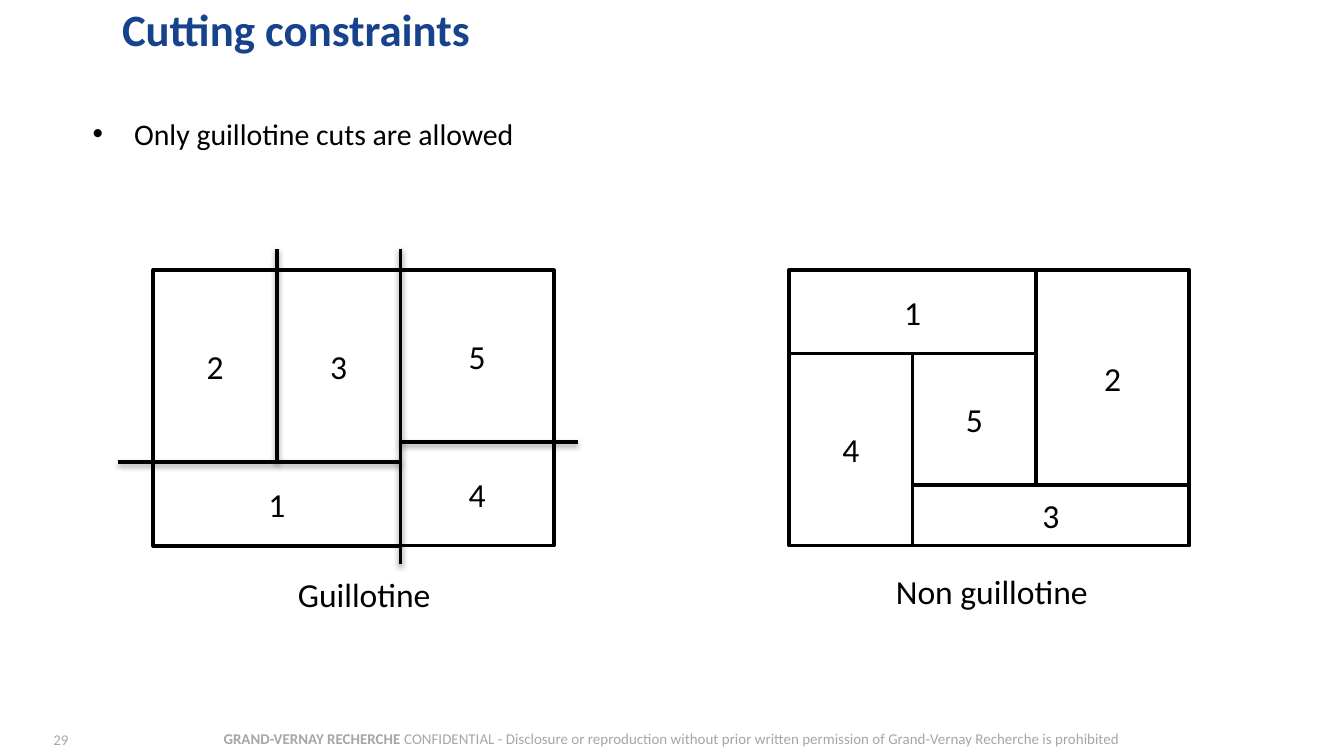
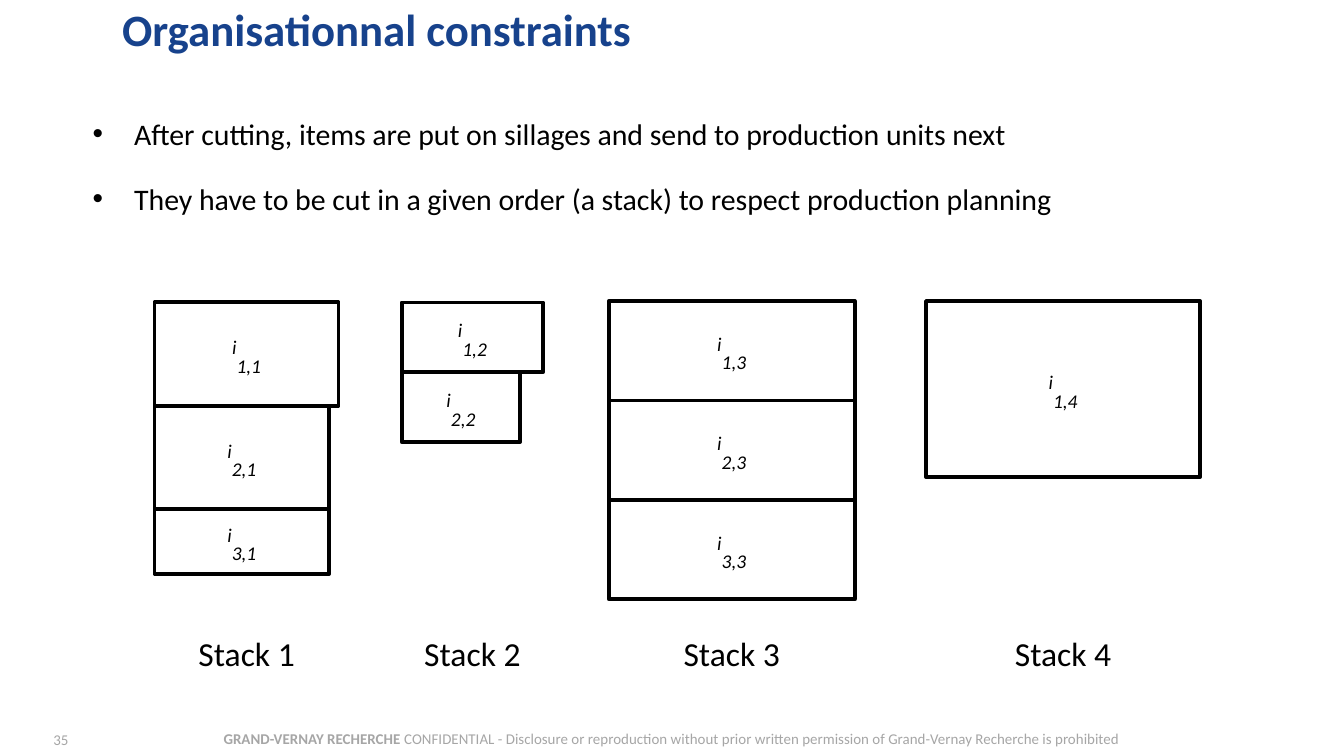
from dataclasses import dataclass
from itertools import accumulate

from lxml import etree
from pptx import Presentation
from pptx.dml.color import RGBColor
from pptx.enum.shapes import MSO_CONNECTOR, MSO_SHAPE
from pptx.enum.text import MSO_ANCHOR, PP_ALIGN
from pptx.oxml.ns import qn
from pptx.util import Inches, Pt

LEFT, CENTER, RIGHT = PP_ALIGN.LEFT, PP_ALIGN.CENTER, PP_ALIGN.RIGHT
TOP, MIDDLE = MSO_ANCHOR.TOP, MSO_ANCHOR.MIDDLE
RECTANGLE, STRAIGHT = MSO_SHAPE.RECTANGLE, MSO_CONNECTOR.STRAIGHT
BLANK_LAYOUT = 6
TOP_SIDE = 0
COLUMNS, ROWS = 100, 56.25
CELL = Inches(0.1)


@dataclass(frozen=True)
class Theme:
    """Colours and type sizes of the deck."""
    font: str = "Calibri"
    title: RGBColor = RGBColor(0x17, 0x42, 0x8C)
    ink: RGBColor = RGBColor(0, 0, 0)
    paper: RGBColor = RGBColor(255, 255, 255)
    muted: RGBColor = RGBColor(0xA6, 0xA6, 0xA6)
    title_size: int = 24
    body_size: int = 16
    label_size: int = 18
    small_size: int = 8
    outline: int = 2


@dataclass(frozen=True)
class Box:
    """A rectangle measured in grid columns and rows."""
    left: float
    top: float
    width: float
    height: float

    def emu(self):
        """Return left, top, width and height as slide lengths."""
        return [cells(value) for value in (self.left, self.top, self.width, self.height)]


THEME = Theme()
TITLE_BOX = Box(8.1, 0.1, 89.4, 4)
BODY_BOX = Box(5.9, 8.4, 88.2, 41.7)
FOOTER_BOX = Box(6.4, 53.8, 87.2, 2.4)
NUMBER_BOX = Box(0, 54.4, 5.5, 1.3)
OWNER = "GRAND-VERNAY RECHERCHE "
NOTICE = ("CONFIDENTIAL - Disclosure or reproduction without prior written "
          "permission of Grand-Vernay Recherche is prohibited")

PLAN_COLUMNS = (0, 9.2, 18.4, 29.8)
GUILLOTINE_ROWS = (0, 12.8, 14.3, 20.5)
GUILLOTINE_PIECES = {"2": (0, 0, 1, 2), "4": (2, 1, 3, 3), "1": (0, 2, 2, 3),
                     "5": (2, 0, 3, 1), "3": (1, 0, 2, 2)}
FREE_ROWS = (0, 6.2, 16, 20.5)
FREE_PIECES = {"4": (0, 1, 1, 3), "3": (1, 2, 3, 3), "1": (0, 0, 2, 1),
               "2": (2, 0, 3, 2), "5": (1, 1, 2, 2)}

STACKS = (
    (11.5, 22.5, ((13.7, 7.7), (13, 7.7), (13, 4.8))),
    (29.9, 22.5, ((10.5, 5.2), (8.8, 5.2))),
    (45.3, 22.4, ((18.3, 7.4),) * 3),
    (68.9, 22.4, ((20.4, 13.1),)),
)
STACK_CAPTION_TOP, STACK_CAPTION_WIDTH, STACK_CAPTION_HEIGHT = 46.7, 13.9, 3.8


def cells(count):
    """Convert grid cells to a slide length."""
    return round(count * CELL)


def style(para, size, color, align=LEFT, bold=None):
    """Set the look of a whole paragraph."""
    para.alignment = align
    font = para.font
    font.name, font.size, font.bold = THEME.font, Pt(size), bold
    font.color.rgb = color


def add_text(page, box, text, size, color=THEME.ink, align=LEFT, anchor=TOP, bold=None, insets=None):
    """Add a text box with one paragraph and return its frame."""
    frame = page.shapes.add_textbox(*box.emu()).text_frame
    frame.word_wrap, frame.vertical_anchor = True, anchor
    if insets is not None:
        frame.margin_left = frame.margin_right = cells(insets)
        frame.margin_top = frame.margin_bottom = 0
    para = frame.paragraphs[0]
    para.text = text
    style(para, size, color, align, bold)
    return frame


def add_piece(page, box, text="", fill=None):
    """Add an outlined rectangle with a centred label."""
    piece = page.shapes.add_shape(RECTANGLE, *box.emu())
    piece.shadow.inherit = False
    if fill is None:
        piece.fill.background()
    else:
        piece.fill.solid()
        piece.fill.fore_color.rgb = fill
    piece.line.color.rgb, piece.line.width = THEME.ink, Pt(THEME.outline)
    frame = piece.text_frame
    frame.word_wrap, frame.vertical_anchor = True, MIDDLE
    para = frame.paragraphs[0]
    para.text = text
    style(para, THEME.label_size, THEME.ink, CENTER)
    return piece


def add_cut(page, start, end, piece=None):
    """Add a shadowed cut line, joined to the top of a piece if given."""
    cut = page.shapes.add_connector(STRAIGHT, *map(cells, start + end))
    if piece is not None:
        cut.begin_connect(piece, TOP_SIDE)
    cut.line.color.rgb, cut.line.width = THEME.ink, Pt(THEME.outline)
    effects = etree.SubElement(cut.element.spPr, qn("a:effectLst"))
    shadow = etree.SubElement(effects, qn("a:outerShdw"), blurRad=str(Pt(3.1)),
                              dist=str(Pt(1.6)), dir="5400000", rotWithShape="0")
    color = etree.SubElement(shadow, qn("a:srgbClr"), val=str(THEME.ink))
    etree.SubElement(color, qn("a:alpha"), val="38000")


def add_bullets(page, box, lines):
    """Add the bulleted body text."""
    frame = add_text(page, box, lines[0], THEME.body_size)
    for line in lines[1:]:
        frame.add_paragraph().text = line
    for index, para in enumerate(frame.paragraphs):
        properties = para._p.get_or_add_pPr()
        properties.set("marL", str(cells(3.1)))
        properties.set("indent", str(-cells(3.1)))
        para.line_spacing = 0.9
        if index:
            para.space_before = Pt(17.5)
        for child in properties.findall(qn("a:defRPr")):
            properties.remove(child)
        etree.SubElement(properties, qn("a:buFont"), typeface="Arial")
        etree.SubElement(properties, qn("a:buChar"), char="•")
        style(para, THEME.body_size, THEME.ink)


def add_page(deck, title, number, lines):
    """Add a slide with title, bullets, footer and page number."""
    page = deck.slides.add_slide(deck.slide_layouts[BLANK_LAYOUT])
    footer = add_text(page, FOOTER_BOX, OWNER, THEME.small_size, THEME.muted, CENTER)
    para = footer.paragraphs[0]
    para.runs[0].font.bold = True
    para.add_run().text = NOTICE
    add_text(page, TITLE_BOX, title, THEME.title_size, THEME.title, bold=True, insets=1)
    add_bullets(page, BODY_BOX, lines)
    add_text(page, NUMBER_BOX, number, THEME.small_size, THEME.muted, RIGHT, MIDDLE, insets=0.4)
    return page


def draw_plan(page, left, top, rows, pieces):
    """Draw a cutting plan from its tracks and return the pieces by label."""
    return {
        label: add_piece(page, Box(left + PLAN_COLUMNS[first], top + rows[upper],
                                   PLAN_COLUMNS[last] - PLAN_COLUMNS[first],
                                   rows[lower] - rows[upper]), label)
        for label, (first, upper, last, lower) in pieces.items()
    }


def draw_cuts(page, left, top, pieces):
    """Draw the guillotine cuts, which overhang the plan."""
    _, inner, middle, right = (left + column for column in PLAN_COLUMNS)
    _, upper, lower, bottom = (top + row for row in GUILLOTINE_ROWS)
    add_cut(page, (middle, lower), (left - 2.6, lower))
    add_cut(page, (right + 1.8, upper), (middle, upper))
    add_cut(page, (inner, lower), (inner, top - 1.6), pieces["1"])
    add_cut(page, (middle, bottom + 1.4), (middle, top - 1.6))


def draw_stack(page, number, left, top, sizes):
    """Draw a stack of items with its caption centred on the first one."""
    tops = accumulate((height for _, height in sizes), initial=top)
    for rank, (item_top, (width, height)) in enumerate(zip(tops, sizes), 1):
        item = add_piece(page, Box(left, item_top, width, height), fill=THEME.paper)
        para = item.text_frame.paragraphs[0]
        para.font.italic = True
        for text, baseline in (("i", 30000), (f"{rank},{number}", -25000)):
            span = para.add_run()
            span.text = text
            span._r.get_or_add_rPr().set("baseline", str(baseline))
    caption_left = left + (sizes[0][0] - STACK_CAPTION_WIDTH) / 2
    caption = Box(caption_left, STACK_CAPTION_TOP, STACK_CAPTION_WIDTH, STACK_CAPTION_HEIGHT)
    add_text(page, caption, f"Stack {number}", THEME.label_size, align=CENTER, anchor=MIDDLE)


def build_cutting(deck):
    """Build the slide that compares the two cutting plans."""
    page = add_page(deck, "Cutting constraints", "29", ["Only guillotine cuts are allowed"])
    draw_plan(page, 58.7, 20.1, FREE_ROWS, FREE_PIECES)
    pieces = draw_plan(page, 11.4, 20.1, GUILLOTINE_ROWS, GUILLOTINE_PIECES)
    for text, left, top in (("Non guillotine", 62.4, 42), ("Guillotine", 15.7, 42.2)):
        add_text(page, Box(left, top, 22.8, 4), text, THEME.label_size, align=CENTER)
    draw_cuts(page, 11.4, 20.1, pieces)


def build_stacks(deck):
    """Build the slide that shows the ordered stacks."""
    page = add_page(deck, "Organisationnal constraints", "35", [
        "After cutting, items are put on sillages and send to production units next",
        "They have to be cut in a given order (a stack) to respect production planning",
    ])
    for number, stack in enumerate(STACKS, 1):
        draw_stack(page, number, *stack)


def main():
    """Build and save the deck."""
    deck = Presentation()
    deck.slide_width, deck.slide_height = cells(COLUMNS), cells(ROWS)
    build_cutting(deck)
    build_stacks(deck)
    deck.save("out.pptx")


if __name__ == "__main__":
    main()
